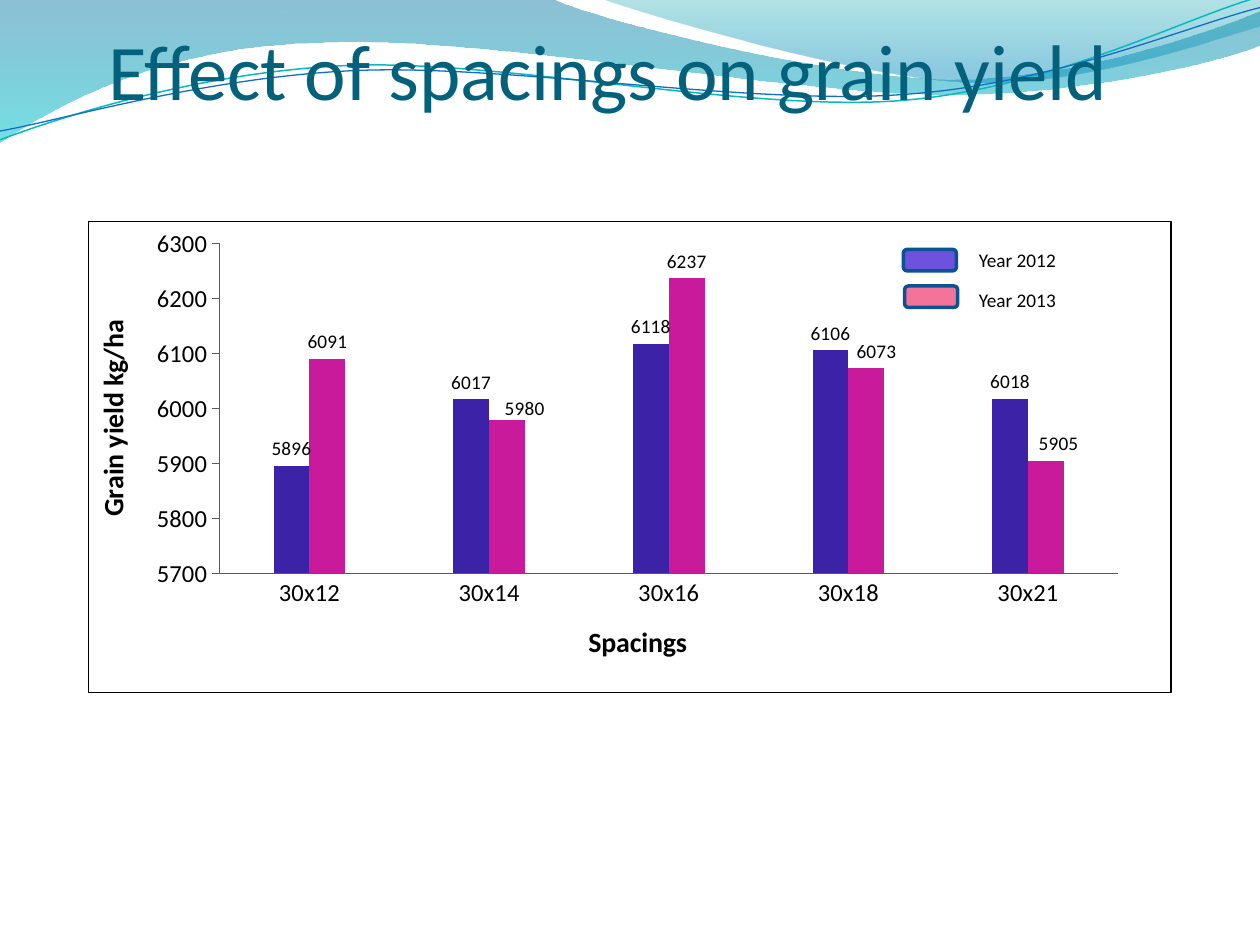
"""Build a slide with a clustered column chart of grain yield by spacing."""
from lxml.etree import SubElement
from pptx import Presentation
from pptx.chart.data import CategoryChartData as Data
from pptx.dml.color import RGBColor as Rgb
from pptx.enum.chart import XL_CHART_TYPE as Kind, XL_LABEL_POSITION as Spot, XL_TICK_MARK as Tick
from pptx.enum.shapes import MSO_SHAPE as Form
from pptx.enum.text import MSO_ANCHOR as Anchor
from pptx.oxml import parse_xml
from pptx.oxml.ns import nsdecls, qn
from pptx.util import Pt

HUE = {name: Rgb.from_string(code) for name, code in {
    "ink": "000000", "title": "04617B", "axis": "595959", "edge": "0B5292",
    "blue": "3B22A6", "pink": "C81A9A", "key blue": "6C52DC", "key pink": "F47499",
    "deep": "0074A1", "aqua": "00C6CF", "teal": "00A1A9", "sky": "008BBF",
    "thin aqua": "0AB8BF", "thin blue": "0F6FC6"}.items()}
FACE = "Calibri"

deck = Presentation()
deck.slide_width, deck.slide_height = 9144000, 6858000
slide = deck.slides.add_slide(deck.slide_layouts[6])
shapes = slide.shapes
unit = deck.slide_width // 100


def bend(start, parts, close):
    """Draw straight parts (x, y) and cubic parts (two handles, end) in grid units."""
    pen = shapes.build_freeform(start[0] * unit, start[1] * unit)
    for part in parts:
        pen.add_line_segments(
            [(x * unit, y * unit) for x, y in zip(part[::2], part[1::2])], close=False)
    if close:
        pen.add_line_segments([], close=True)
    shape = pen.convert_to_shape()
    shape.shadow.inherit = False
    steps = iter(shape.element.xpath(".//a:lnTo"))
    for part in parts:
        first = next(steps)
        if len(part) == 6:
            first.tag = qn("a:cubicBezTo")
            for step in (next(steps), next(steps)):
                first.append(step[0])
                step.getparent().remove(step)
    return shape


def lay(**vals):
    """Make a manual chart layout."""
    body = "".join(f'<c:{key} val="{val}"/>' for key, val in vals.items())
    return parse_xml(f'<c:layout {nsdecls("c")}><c:manualLayout>{body}</c:manualLayout></c:layout>')


waves = [
    ((0, 0), [(44, 0), (47.6, 1.7, 66.4, 6.3, 75.8, 6.3), (85.3, 6.3, 95.8, 2.6, 100, 0.9),
              (100, 3.6), (98.3, 4.4, 87, 7.6, 74.6, 7.5), (62.2, 7.5, 38.2, 2.8, 25.7, 3.4),
              (12.9, 3.6, 4.6, 8.3, 0, 11.3), (0, 0)],
     [(0, "deep", 45), (1, "aqua", 55)]),
    ((47.9, 0), [(50.9, 1.1, 68.2, 6.2, 76.9, 6.5), (85.6, 6.9, 96.1, 3.2, 100, 2.1),
                 (100, 0), (47.9, 0)],
     [(0, "teal", 30), (0.8, "sky", 45)]),
]
for start, parts, stops in waves:
    wave = bend(start, parts, True)
    wave.line.fill.background()
    wave.fill.gradient()
    wave.fill.gradient_angle = 270
    for stop, (place, hue, _) in zip(wave.fill.gradient_stops, stops):
        stop.position, stop.color.rgb = place, HUE[hue]
    for node, (_, _, share) in zip(wave.element.xpath(".//a:gs/a:srgbClr"), stops):
        SubElement(node, qn("a:alpha")).set("val", str(share * 1000))

lines = [
    ((0, 11.1), [(4.8, 9.3, 15.8, 5.7, 27.7, 5.2), (39.5, 4.7, 59.3, 8.9, 71.3, 8),
                 (83.3, 7.1, 93.8, 1.5, 99.8, -0.2)], "thin aqua", 0.85),
    ((0, 10.4), [(4.7, 9.6, 16.4, 6.1, 28.3, 5.6), (40.3, 5.1, 59.7, 8.4, 71.7, 7.5),
                 (83.6, 6.7, 94.1, 2.1, 100, 0.6)], "thin blue", 0.75),
]
for start, parts, hue, thick in lines:
    curve = bend(start, parts, False)
    curve.fill.background()
    curve.line.color.rgb, curve.line.width = HUE[hue], Pt(thick)

data = Data(number_format="General")
data.categories = [f"30x{gap}" for gap in (12, 14, 16, 18, 21)]
data.add_series("Series 1", (5896, 6017, 6118, 6106, 6018))
data.add_series("Series 2", (6091, 5980, 6237, 6073, 5905))
wide, high = 86, 37.5
chart = shapes.add_chart(
    Kind.COLUMN_CLUSTERED, *[round(n * unit) for n in (7, 17.5, wide, high)], data).chart
chart.has_legend = chart.has_title = False
chart.font.size, chart.font.name = Pt(10), "Vollkorn"
chart.font.color.rgb = HUE["ink"]

plot = chart.plots[0]
plot.gap_width, plot.overlap, plot.vary_by_categories = 300, 0, False
for bars, hue in zip(plot.series, ("blue", "pink")):
    bars.format.fill.solid()
    bars.format.fill.fore_color.rgb = HUE[hue]
    tags = bars.data_labels
    tags.show_value, tags.position = True, Spot.OUTSIDE_END
    tags.font.size, tags.font.name = Pt(11), FACE

shifts = {1: (1.4, 0.5), 3: (0.8, 0), 4: (1, 0)}
for spot in shifts:
    tag = plot.series[1].points[spot].data_label
    tag.position = Spot.OUTSIDE_END
    tag.font.size, tag.font.name = Pt(11), FACE
for node, (x, y) in zip(chart.element.xpath(".//c:dLbl"), shifts.values()):
    node.insert(1, lay(x=x / wide, y=y / high))

axes = [(chart.category_axis, "Spacings", Tick.NONE, 39.3, 31.6),
        (chart.value_axis, "Grain yield kg/ha", Tick.OUTSIDE, 0, 7.5)]
for axis, name, tick, x, y in axes:
    axis.has_major_gridlines = False
    axis.major_tick_mark, axis.minor_tick_mark = tick, Tick.NONE
    axis.tick_labels.font.size, axis.tick_labels.font.name = Pt(14), FACE
    axis.format.line.color.rgb = HUE["axis"]
    frame = axis.axis_title.text_frame
    frame.text = name
    font = frame.paragraphs[0].font
    font.size, font.name, font.bold = Pt(16), FACE, True
    font.color.rgb = HUE["ink"]
for node, (*_, x, y) in zip(chart.element.xpath(".//c:title"), axes):
    for old in node.xpath("c:layout"):
        node.remove(old)
    node.xpath("c:tx")[0].addnext(lay(xMode="edge", yMode="edge", x=x / wide, y=y / high))
scale = chart.value_axis
scale.minimum_scale, scale.maximum_scale, scale.major_unit = 5700, 6300, 100

area = chart.element.xpath(".//c:plotArea")[0]
for old in area.xpath("c:layout"):
    area.remove(old)
area.insert(0, lay(layoutTarget="inner", xMode="edge", yMode="edge",
                   x=10.4 / wide, y=1.8 / high, w=0.83, h=0.7))
chart.element.xpath("c:chart")[0].addnext(parse_xml(
    f'<c:spPr {nsdecls("c", "a")}><a:noFill/><a:ln w="9525"><a:solidFill>'
    f'<a:srgbClr val="{HUE["ink"]}"/></a:solidFill></a:ln></c:spPr>'))

for x, y, hue in [(71.7, 19.8, "key blue"), (71.8, 22.7, "key pink")]:
    key = shapes.add_shape(Form.ROUNDED_RECTANGLE, *[round(n * unit) for n in (x, y, 4.2, 1.7)])
    key.shadow.inherit = False
    key.fill.solid()
    key.fill.fore_color.rgb = HUE[hue]
    key.line.color.rgb, key.line.width = HUE["edge"], Pt(2)

texts = [
    ("Effect of spacings on grain yield", (8.6, 0, 87.2, 9.2), 45, "title", Anchor.BOTTOM, (0, 0.5, 0, 0)),
    ("Year 2013", (76.7, 22.4, 8.3, 2.9), 11, "ink", Anchor.TOP, (1, 0.5, 1, 0.5)),
    ("Year 2012", (76.7, 19.2, 8.3, 2.9), 11, "ink", Anchor.TOP, (1, 0.5, 1, 0.5)),
]
for words, spot, size, hue, anchor, pads in texts:
    frame = shapes.add_textbox(*[round(n * unit) for n in spot]).text_frame
    frame.text, frame.vertical_anchor = words, anchor
    frame.word_wrap = hue == "title"
    frame.margin_left, frame.margin_top, frame.margin_right, frame.margin_bottom = [
        round(n * unit) for n in pads]
    font = frame.paragraphs[0].font
    font.size, font.name = Pt(size), FACE
    font.color.rgb = HUE[hue]

deck.save("out.pptx")
